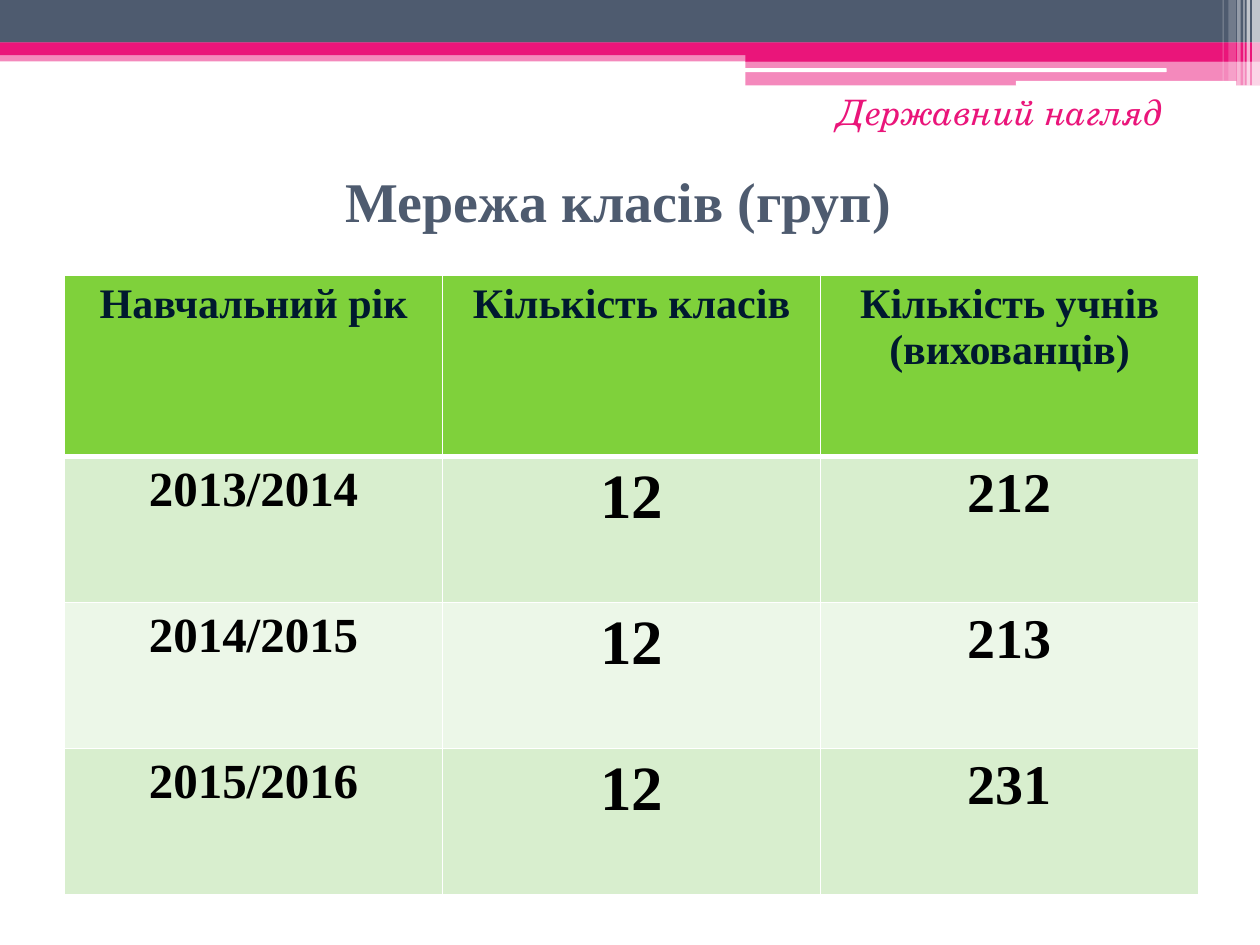
from pptx import Presentation
from pptx.dml.color import RGBColor
from pptx.enum.shapes import MSO_SHAPE
from pptx.enum.text import MSO_ANCHOR, PP_ALIGN
from pptx.oxml.ns import qn
from pptx.util import Pt
from lxml import etree

RECT, ROUND = MSO_SHAPE.RECTANGLE, MSO_SHAPE.ROUNDED_RECTANGLE
TOP, MIDDLE = MSO_ANCHOR.TOP, MSO_ANCHOR.MIDDLE
CENTER, RIGHT = PP_ALIGN.CENTER, PP_ALIGN.RIGHT

THEME = {
    "slate": "4E5B6F", "pink": "EA157A", "white": "FFFFFF",
    "ink": "00192F", "black": "000000", "green": "7FD13B",
    "bands": ("D8EECE", "ECF7E8"),
    "serif": "Times New Roman", "script": "TeX Gyre Schola",
    "title": 32, "note": 20, "head": 24, "body": (28, 36, 32),
}

TITLE = "Мережа класів (груп) "
NOTE = "Державний нагляд"
ROWS = [
    ("Навчальний рік", "Кількість класів", "Кількість учнів (вихованців)"),
    ("2013/2014", "12", "212"),
    ("2014/2015", "12", "213"),
    ("2015/2016", "12", "231"),
]

WIDTH, HEIGHT = 720, 540
SPLIT = 426
# left, top, width, height, colour, opacity
BARS = [
    (0, 28.8, WIDTH, 6.3, "pink", 50),
    (0, 0, WIDTH, 24.4, "slate", 100),
    (0, 24.3, WIDTH, 7.2, "pink", 100),
    (SPLIT, 28.1, WIDTH - SPLIT, 7.2, "pink", 100),
    (SPLIT, 35, WIDTH - SPLIT, 13.9, "pink", 50),
]
PILLS = [(425.5, 39, 241.2, 2.2), (580.5, 46.2, 126, 2.9)]
# left, width, height, opacity
STRIPES = [
    (715.5, 4.5, 48.9, 65), (712.3, 2, 48.9, 65), (710.5, 0.7, 48.9, 60),
    (707, 2, 48.9, 40), (702, 4.3, 46.1, 20), (698.6, 0.7, 46.1, 30),
]
GRID = {"left": 36.9, "top": 157, "col": 216, "head": 103.7, "row": 83.5}


def add_bar(slide, kind, box, color, alpha=100):
    """Add a borderless filled shape with the given opacity in percent."""
    shape = slide.shapes.add_shape(kind, *map(Pt, box))
    shape.shadow.inherit = False
    shape.line.fill.background()
    shape.fill.solid()
    shape.fill.fore_color.rgb = RGBColor.from_string(THEME[color])
    if alpha < 100:
        tint = shape.fill._xPr.find(".//" + qn("a:srgbClr"))
        etree.SubElement(tint, qn("a:alpha")).set("val", str(alpha * 1000))


def set_text(frame, text, align, size, color, face="serif", bold=True, italic=False):
    """Write one styled paragraph into a text frame."""
    frame.text = text
    frame.word_wrap = True
    line = frame.paragraphs[0]
    line.alignment = align
    font = line.runs[0].font
    font.name, font.size = THEME[face], Pt(size)
    font.bold, font.italic = bold, italic
    font.color.rgb = RGBColor.from_string(THEME[color])


def add_label(slide, box, text, anchor, *style, **more):
    """Add a text box with one styled paragraph."""
    frame = slide.shapes.add_textbox(*map(Pt, box)).text_frame
    set_text(frame, text, *style, **more)
    frame.vertical_anchor = anchor


def set_edges(cell, widths):
    """Draw white cell borders, widths in points by side."""
    props = cell._tc.get_or_add_tcPr()
    for spot, (side, width) in enumerate(widths.items()):
        edge = etree.Element(qn("a:ln" + side), w=str(Pt(width)))
        fill = etree.SubElement(edge, qn("a:solidFill"))
        etree.SubElement(fill, qn("a:srgbClr")).set("val", THEME["white"])
        props.insert(spot, edge)


def add_grid(slide):
    """Add the table with a green head and banded rows."""
    count, cols = len(ROWS), len(ROWS[0])
    tall = GRID["head"] + GRID["row"] * (count - 1)
    box = (GRID["left"], GRID["top"], GRID["col"] * cols, tall)
    table = slide.shapes.add_table(count, cols, *map(Pt, box)).table
    for col in table.columns:
        col.width = Pt(GRID["col"])
    for r, row in enumerate(ROWS):
        table.rows[r].height = Pt(GRID["row"] if r else GRID["head"])
        fill = THEME["bands"][(r - 1) % 2] if r else THEME["green"]
        for c, text in enumerate(row):
            cell = table.cell(r, c)
            size = THEME["body"][c] if r else THEME["head"]
            set_text(cell.text_frame, text, CENTER, size, "black" if r else "ink")
            cell.fill.solid()
            cell.fill.fore_color.rgb = RGBColor.from_string(fill)
            set_edges(cell, {"L": 1, "R": 1, "T": 3 if r == 1 else 1, "B": 1 if r else 3})


def main():
    """Build and save the slide."""
    deck = Presentation()
    deck.slide_width, deck.slide_height = Pt(WIDTH), Pt(HEIGHT)
    slide = deck.slides.add_slide(deck.slide_layouts[6])
    for *box, color, alpha in BARS:
        add_bar(slide, RECT, box, color, alpha)
    for box in PILLS:
        add_bar(slide, ROUND, box, "white")
    for left, width, height, alpha in STRIPES:
        add_bar(slide, RECT, (left, 0, width, height), "white", alpha)
    add_label(slide, (31, 82.8, 653, 62.6), TITLE, MIDDLE, CENTER, THEME["title"], "slate")
    add_grid(slide)
    add_label(slide, (414, 48.2, 257.8, 36), NOTE, TOP, RIGHT, THEME["note"], "pink",
              face="script", bold=False, italic=True)
    deck.save("out.pptx")


if __name__ == "__main__":
    main()
